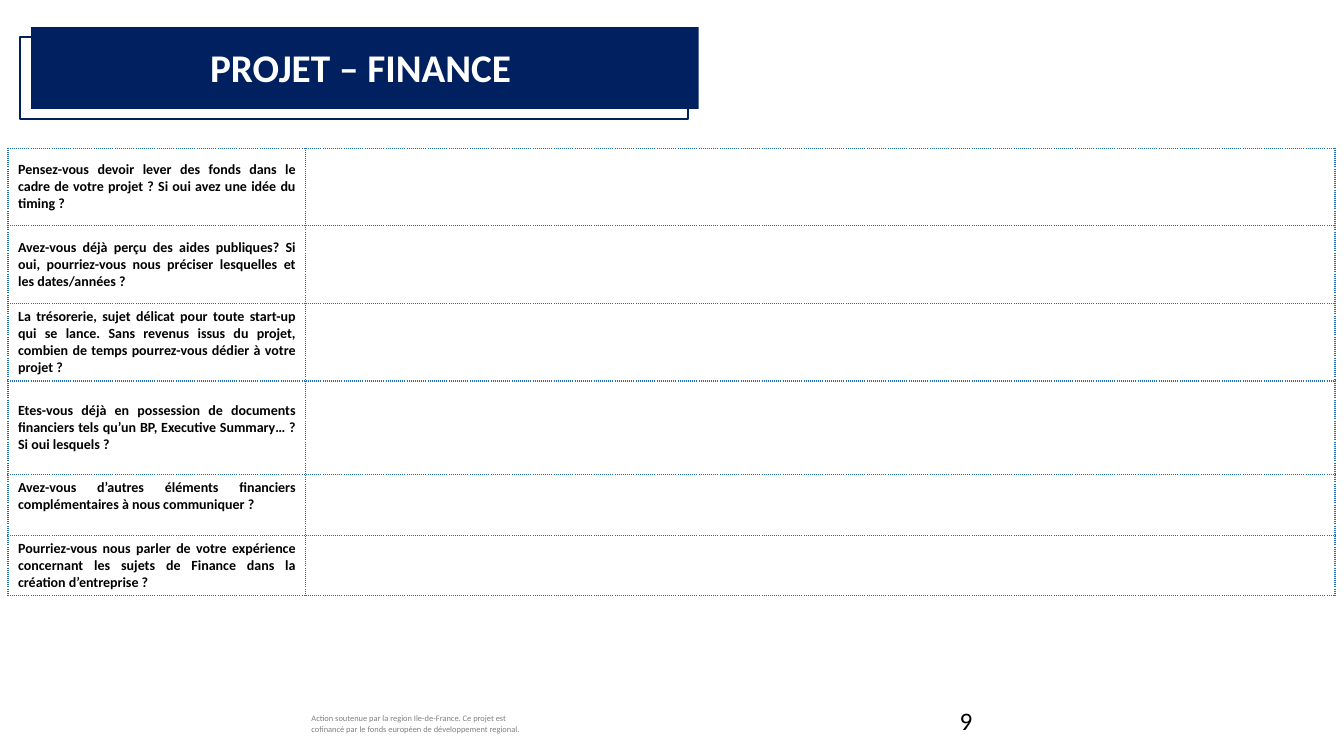
import pptx
import pptx.util
import pptx.dml.color
import pptx.enum.shapes
import pptx.enum.text
import pptx.oxml

Inches = pptx.util.Inches
Align = pptx.enum.text.PP_ALIGN
Anchor = pptx.enum.text.MSO_ANCHOR
NAVY = "002060"


def color(code):
    return pptx.dml.color.RGBColor.from_string(code)


def write(frame, words, size=10, ink="000000", bold=False, align=Align.LEFT):
    frame.word_wrap = True
    para = frame.paragraphs[0]
    para.alignment = align
    run = para.add_run()
    run.text = words
    run.font.name = "Calibri"
    run.font.size = pptx.util.Pt(size)
    run.font.bold = bold
    run.font.color.rgb = color(ink)


deck = pptx.Presentation()
deck.slide_width, deck.slide_height = Inches(13.33), Inches(7.5)
slide = deck.slides.add_slide(deck.slide_layouts[6])
shapes = slide.shapes

# Footer
note = shapes.add_textbox(Inches(2.99), Inches(7.03), Inches(2.38), Inches(0.3))
write(note.text_frame, "Action soutenue par la region Ile-de-France. Ce projet est "
      "cofinancé par le fonds européen de développement regional.", size=6, ink="808080")

# Question table: text, row height, anchor
rows = [
    ("Pensez-vous devoir lever des fonds dans le cadre de votre projet ? "
     "Si oui avez une idée du timing ? ", 0.77, Anchor.MIDDLE),
    ("Avez-vous déjà perçu des aides publiques? Si oui, pourriez-vous nous "
     "préciser lesquelles et les dates/années ?", 0.77, Anchor.MIDDLE),
    ("La trésorerie, sujet délicat pour toute start-up qui se lance. Sans revenus issus "
     "du projet, combien de temps pourrez-vous dédier à votre projet ? ", 0.77, Anchor.MIDDLE),
    ("Etes-vous déjà en possession de documents financiers tels qu’un BP, "
     "Executive Summary… ? Si oui lesquels ? ", 0.93, Anchor.MIDDLE),
    ("Avez-vous d’autres éléments financiers complémentaires à nous communiquer ?",
     0.6, Anchor.TOP),
    ("Pourriez-vous nous parler de votre expérience concernant les sujets de Finance "
     "dans la création d’entreprise ?", 0.6, Anchor.MIDDLE),
]
high = sum(row[1] for row in rows)
table = shapes.add_table(len(rows), 2, Inches(0.08), Inches(1.47),
                         Inches(13.16), Inches(high)).table
table.first_row = table.horz_banding = False
table.columns[0].width, table.columns[1].width = Inches(2.95), Inches(10.21)
for i, (words, tall, anchor) in enumerate(rows):
    table.rows[i].height = Inches(tall)
    cell = table.cell(i, 0)
    cell.vertical_anchor = anchor
    write(cell.text_frame, words, bold=True, align=Align.JUSTIFY)

# Dotted borders and clear cells
for cell in table.iter_cells():
    props = cell._tc.get_or_add_tcPr()
    for side in "LRTB":
        props.append(pptx.oxml.parse_xml(
            f'<a:ln{side} xmlns:a="http://schemas.openxmlformats.org/drawingml/2006/main" '
            'w="12700"><a:solidFill><a:srgbClr val="2070B8"/></a:solidFill>'
            f'<a:prstDash val="sysDot"/></a:ln{side}>'))
    cell.fill.background()

# Title banner: outline behind, solid in front
for left, top, solid in [(0.2, 0.37, False), (0.31, 0.27, True)]:
    box = shapes.add_shape(pptx.enum.shapes.MSO_SHAPE.RECTANGLE,
                           Inches(left), Inches(top), Inches(6.62), Inches(0.81))
    box.shadow.inherit = False
    if solid:
        box.fill.solid()
        box.fill.fore_color.rgb = color(NAVY)
        box.line.fill.background()
    else:
        box.fill.background()
        box.line.color.rgb = color(NAVY)
        box.line.width = pptx.util.Pt(1.5)

title = shapes.add_textbox(Inches(0.31), Inches(0.38), Inches(6.62), Inches(0.57))
write(title.text_frame, "PROJET – FINANCE ", size=28, ink="FFFFFF", bold=True,
      align=Align.CENTER)

# Page number
page = shapes.add_textbox(Inches(9.42), Inches(6.95), Inches(3), Inches(0.4))
page.text_frame.vertical_anchor = Anchor.MIDDLE
write(page.text_frame, "9", size=18)

deck.save("out.pptx")
